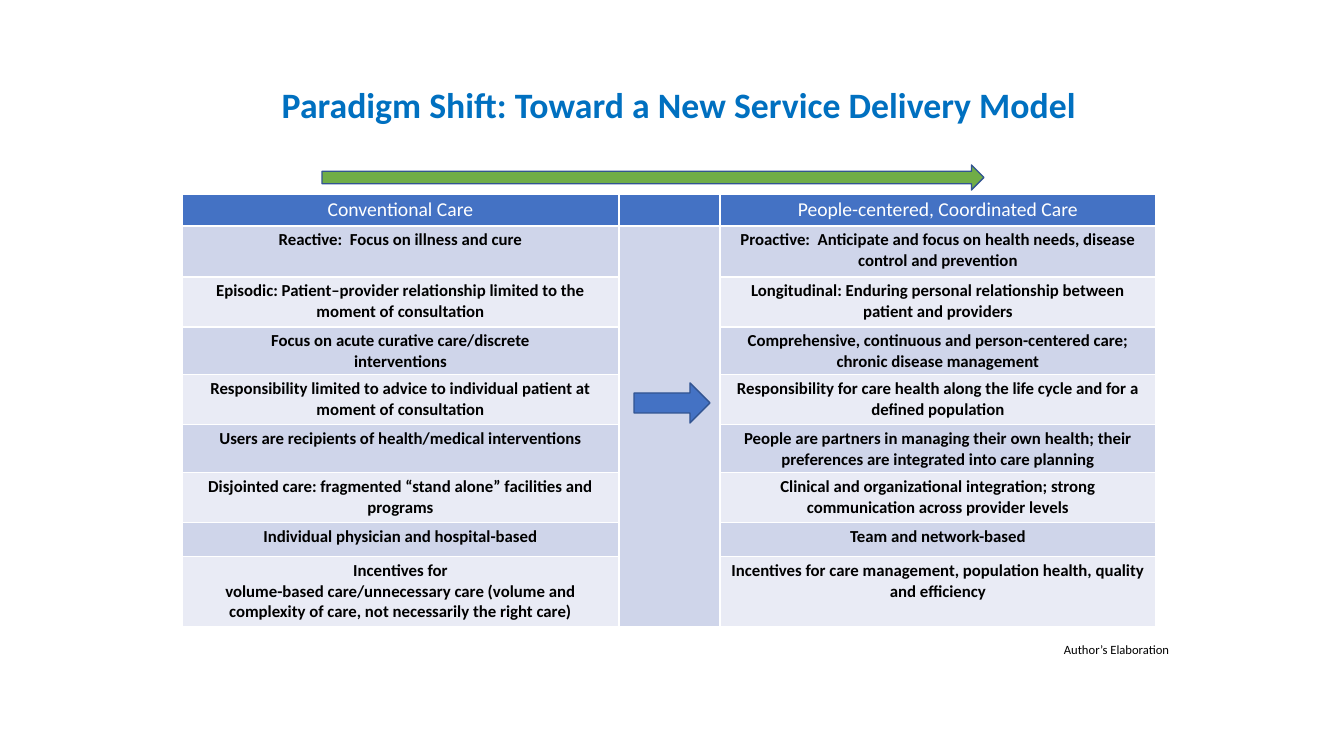
from lxml.etree import SubElement
from pptx import Presentation
from pptx.dml.color import RGBColor
from pptx.enum.shapes import MSO_SHAPE
from pptx.enum.text import MSO_ANCHOR, MSO_AUTO_SIZE, PP_ALIGN
from pptx.oxml.ns import qn
from pptx.util import Emu, Pt

SCALE = 12192000 / 1344  # EMU in one px

HUES = {
    "title": "0070C0",
    "head": "4472C4",
    "dark": "CFD5EA",
    "light": "E9EBF5",
    "green": "70AD47",
    "edge": "325491",
    "white": "FFFFFF",
    "black": "000000",
}

# Text formats
TITLE = {"name": "Calibri", "size": Pt(25.5), "bold": True}
HEAD = {"name": "Calibri", "size": Pt(14), "bold": False}
BODY = {"name": "Calibri", "size": Pt(12), "bold": True}
NOTE = {"name": "Calibri", "size": Pt(9), "bold": False}

# Table: left and right text of each row
COLS = [437, 101, 436]
ROWS = [32, 51, 50, 48, 50, 48, 50, 34, 70]
PAIRS = [
    ("Conventional Care", "People-centered, Coordinated Care"),
    ("Reactive:  Focus on illness and cure",
     "Proactive:  Anticipate and focus on health needs, disease control and prevention"),
    ("Episodic: Patient–provider relationship limited to the moment of consultation",
     "Longitudinal: Enduring personal relationship between patient and providers"),
    ("Focus on acute curative care/discrete\ninterventions",
     "Comprehensive, continuous and person-centered care; chronic disease management"),
    ("Responsibility limited to advice to individual patient at moment of consultation",
     "Responsibility for care health along the life cycle and for a defined population"),
    ("Users are recipients of health/medical interventions",
     "People are partners in managing their own health; their preferences are "
     "integrated into care planning"),
    ("Disjointed care: fragmented “stand alone” facilities and programs",
     "Clinical and organizational integration; strong communication across provider levels"),
    ("Individual physician and hospital-based", "Team and network-based"),
    ("Incentives for\nvolume-based care/unnecessary care (volume and complexity of care, "
     "not necessarily the right care)",
     "Incentives for care management, population health, quality and efficiency"),
]


def px(num):
    return Emu(round(num * SCALE))


def box(*nums):
    return [px(num) for num in nums]


def hue(name):
    return RGBColor.from_string(HUES[name])


def paint(item, name):
    item.fill.solid()
    item.fill.fore_color.rgb = hue(name)


def write(frame, text, form, name, align):
    frame.text = text
    for para in frame.paragraphs:
        para.alignment = align
        for run in para.runs:
            for key, val in form.items():
                setattr(run.font, key, val)
            run.font.color.rgb = hue(name)


def add_title(slide, text):
    title = slide.shapes.title
    title.left, title.top, title.width, title.height = box(224, 61, 910, 91)
    frame = title.text_frame
    frame.auto_size = MSO_AUTO_SIZE.NONE
    frame.vertical_anchor = MSO_ANCHOR.MIDDLE
    write(frame, text, TITLE, "title", PP_ALIGN.CENTER)
    frame.paragraphs[0].line_spacing = 0.9


def fill_cell(cell, text, row):
    pads = {"margin_left": 7, "margin_right": 7, "margin_top": 4, "margin_bottom": 3}
    for key, val in pads.items():
        setattr(cell, key, px(val))
    form, name = (BODY, "black") if row else (HEAD, "white")
    write(cell.text_frame, text, form, name, PP_ALIGN.CENTER)
    if not text:  # keeps an empty cell from stretching its row
        para = cell.text_frame.paragraphs[0]
        SubElement(para._p, qn("a:endParaRPr"), sz="1200")
    paint(cell, ("dark" if row % 2 else "light") if row else "head")


def add_grid(slide):
    spot = box(182, 194, sum(COLS), sum(ROWS))
    grid = slide.shapes.add_table(len(ROWS), len(COLS), *spot).table
    for col, wide in zip(grid.columns, COLS):
        col.width = px(wide)
    for row, high in zip(grid.rows, ROWS):
        row.height = px(high)
    for row, (left, right) in enumerate(PAIRS):
        for col, text in enumerate((left, "", right)):
            fill_cell(grid.cell(row, col), text, row)
    grid.cell(1, 1).merge(grid.cell(len(ROWS) - 1, 1))


def add_arrow(slide, spot, name):
    arrow = slide.shapes.add_shape(MSO_SHAPE.RIGHT_ARROW, *box(*spot))
    arrow.shadow.inherit = False
    paint(arrow, name)
    arrow.line.color.rgb = hue("edge")
    arrow.line.width = Pt(1)


def add_note(slide, text):
    note = slide.shapes.add_textbox(*box(1054, 637, 135, 25))
    frame = note.text_frame
    frame.word_wrap = False
    frame.auto_size = MSO_AUTO_SIZE.SHAPE_TO_FIT_TEXT
    write(frame, text, NOTE, "black", PP_ALIGN.LEFT)


def main():
    deck = Presentation()
    deck.slide_width, deck.slide_height = box(1344, 756)
    slide = deck.slides.add_slide(deck.slide_layouts[5])

    add_title(slide, "Paradigm Shift: Toward a New Service Delivery Model")
    add_grid(slide)

    # Arrows of the shift: above the table and in its middle column
    add_arrow(slide, (322, 165, 662, 25), "green")
    add_arrow(slide, (634, 383, 76, 40), "head")

    add_note(slide, "Author’s Elaboration")
    deck.save("out.pptx")


if __name__ == "__main__":
    main()
